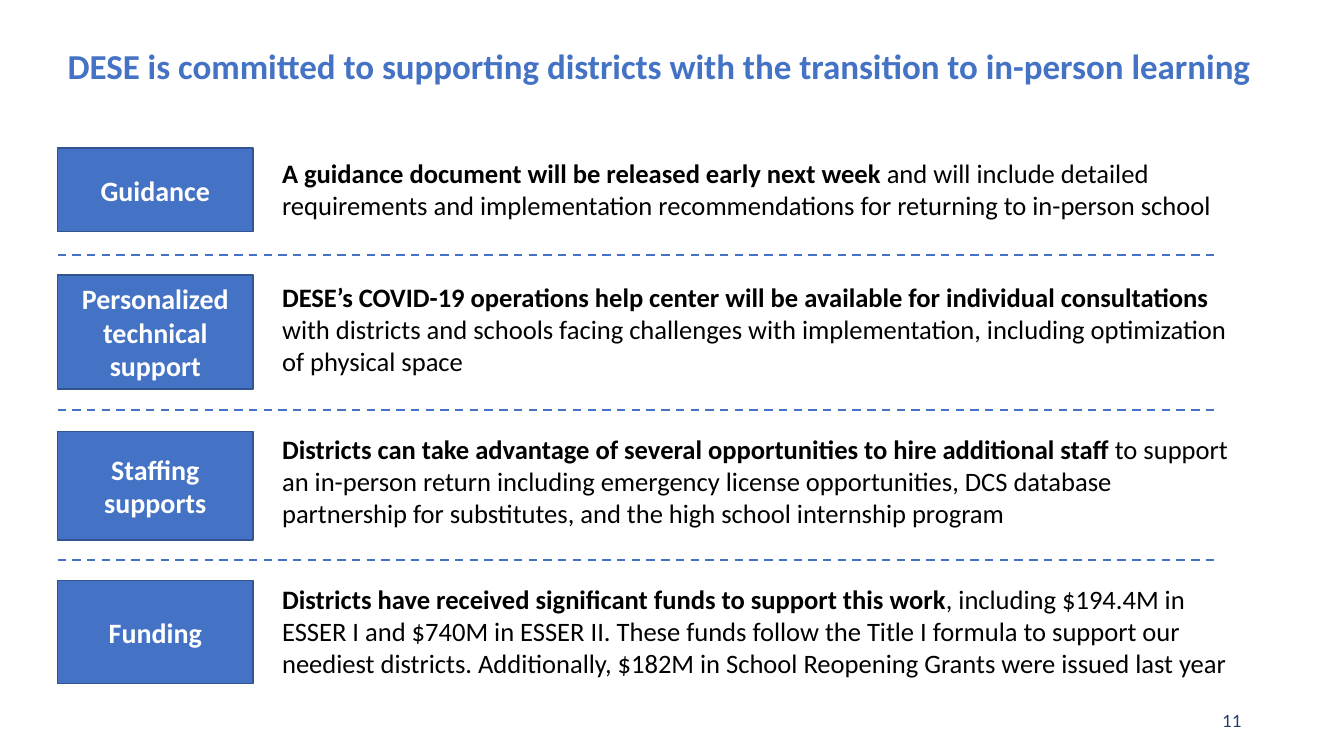
import pptx
import pptx.dml.color
import pptx.enum.dml
import pptx.enum.shapes
import pptx.enum.text
import pptx.oxml.ns
import pptx.util
from pptx.util import Cm

RGBColor = pptx.dml.color.RGBColor
ALIGN = pptx.enum.text.PP_ALIGN
ANCHOR = pptx.enum.text.MSO_ANCHOR

BLUE = RGBColor(0x44, 0x72, 0xC4)
EDGE = RGBColor(0x32, 0x54, 0x91)
NAVY = RGBColor(0x20, 0x3B, 0x6A)
BLACK = RGBColor(0x00, 0x00, 0x00)
WHITE = RGBColor(0xFF, 0xFF, 0xFF)

LEFT = Cm(1.45)
LABEL_WIDTH = Cm(4.93)
RULE_END = Cm(30.66)

TITLE = "DESE is committed to supporting districts with the transition to in-person learning"

SUPPORTS = [
    ("Guidance", 3.73, 2.11, 0,
     "A guidance document will be released early next week ",
     "and will include detailed requirements and implementation recommendations "
     "for returning to in-person school"),
    ("Personalized technical support", 6.93, 2.87, 42.5,
     "DESE’s COVID-19 operations help center will be available for individual consultations ",
     "with districts and schools facing challenges with implementation, "
     "including optimization of physical space"),
    ("Staffing supports", 10.87, 2.74, 40.5,
     "Districts can take advantage of several opportunities to hire additional staff ",
     "to support an in-person return including emergency license opportunities, "
     "DCS database partnership for substitutes, and the high school internship program"),
    ("Funding", 14.63, 2.59, 38.5,
     "Districts have received significant funds to support this work",
     ", including $194.4M in ESSER I and $740M in ESSER II. These funds follow the "
     "Title I formula to support our neediest districts. Additionally, $182M in "
     "School Reopening Grants were issued last year"),
]
RULES = [6.43, 10.34, 14.1]


class Deck:
    styles = {
        "title": {"name": "Calibri", "size": 25, "bold": True, "color": BLUE},
        "label": {"name": "Calibri", "size": 20, "bold": True, "color": WHITE},
        "lead": {"name": "Calibri", "size": 19, "bold": True, "color": BLACK},
        "body": {"name": "Calibri", "size": 19, "bold": False, "color": BLACK},
        "number": {"name": "Lato", "size": 12, "bold": False, "color": NAVY},
    }

    def __init__(self, prs):
        self.s = prs.slides.add_slide(prs.slide_layouts[5])

    def run(self, p, text, style):
        r = p.add_run()
        r.text = text
        for key, value in self.styles[style].items():
            if key == "color":
                r.font.color.rgb = value
            elif key == "size":
                r.font.size = pptx.util.Pt(value)
            else:
                setattr(r.font, key, value)

    def frame(self, sp, anchor):
        tf = sp.text_frame
        fmt = {"word_wrap": True, "vertical_anchor": anchor,
               "auto_size": pptx.enum.text.MSO_AUTO_SIZE.NONE}
        for key, value in fmt.items():
            setattr(tf, key, value)
        return tf

    def title(self, text, left, top, width, height):
        sp = self.s.shapes.title
        fmt = {"left": left, "top": top, "width": width, "height": height}
        for key, value in fmt.items():
            setattr(sp, key, value)
        p = self.frame(sp, ANCHOR.TOP).paragraphs[0]
        p.alignment = ALIGN.LEFT
        self.run(p, text, "title")

    def text(self, paragraphs, left, top, width, height, align=ALIGN.LEFT, anchor=ANCHOR.TOP):
        tf = self.frame(self.s.shapes.add_textbox(left, top, width, height), anchor)
        for i, (gap, runs) in enumerate(paragraphs):
            p = tf.add_paragraph() if i else tf.paragraphs[0]
            p.alignment = align
            p.space_before = pptx.util.Pt(gap)
            for text, style in runs:
                self.run(p, text, style)

    def label(self, text, top, height):
        sp = self.s.shapes.add_shape(
            pptx.enum.shapes.MSO_SHAPE.RECTANGLE, LEFT, top, LABEL_WIDTH, height)
        sp.shadow.inherit = False
        sp.fill.solid()
        sp.fill.fore_color.rgb = BLUE
        sp.line.color.rgb = EDGE
        sp.line.width = pptx.util.Pt(1)
        p = self.frame(sp, ANCHOR.MIDDLE).paragraphs[0]
        p.alignment = ALIGN.CENTER
        self.run(p, text, "label")

    def rule(self, y):
        sp = self.s.shapes.add_connector(
            pptx.enum.shapes.MSO_CONNECTOR.STRAIGHT, LEFT, y, RULE_END, y)
        sp.line.color.rgb = BLUE
        sp.line.width = pptx.util.Pt(1.5)
        sp.line.dash_style = pptx.enum.dml.MSO_LINE.DASH
        effects = pptx.oxml.parse_xml(
            "<a:effectLst %s/>" % pptx.oxml.ns.nsdecls("a"))
        sp.element.spPr.append(effects)


def main():
    prs = pptx.Presentation()
    prs.slide_width = Cm(33.87)
    prs.slide_height = Cm(19.05)
    deck = Deck(prs)
    deck.title(TITLE, LEFT, Cm(0.99), Cm(30.78), Cm(1.32))
    deck.text([(gap, [(lead, "lead"), (body, "body")])
               for _, _, _, gap, lead, body in SUPPORTS],
              Cm(6.86), Cm(3.84), Cm(24.66), Cm(13.7))
    for name, top, height, *_ in SUPPORTS:
        deck.label(name, Cm(top), Cm(height))
    for y in RULES:
        deck.rule(Cm(y))
    deck.text([(0, [("11", "number")])], Cm(23.93), Cm(17.65), Cm(7.62), Cm(1.02),
              ALIGN.RIGHT, ANCHOR.MIDDLE)
    prs.save("out.pptx")


if __name__ == "__main__":
    main()
